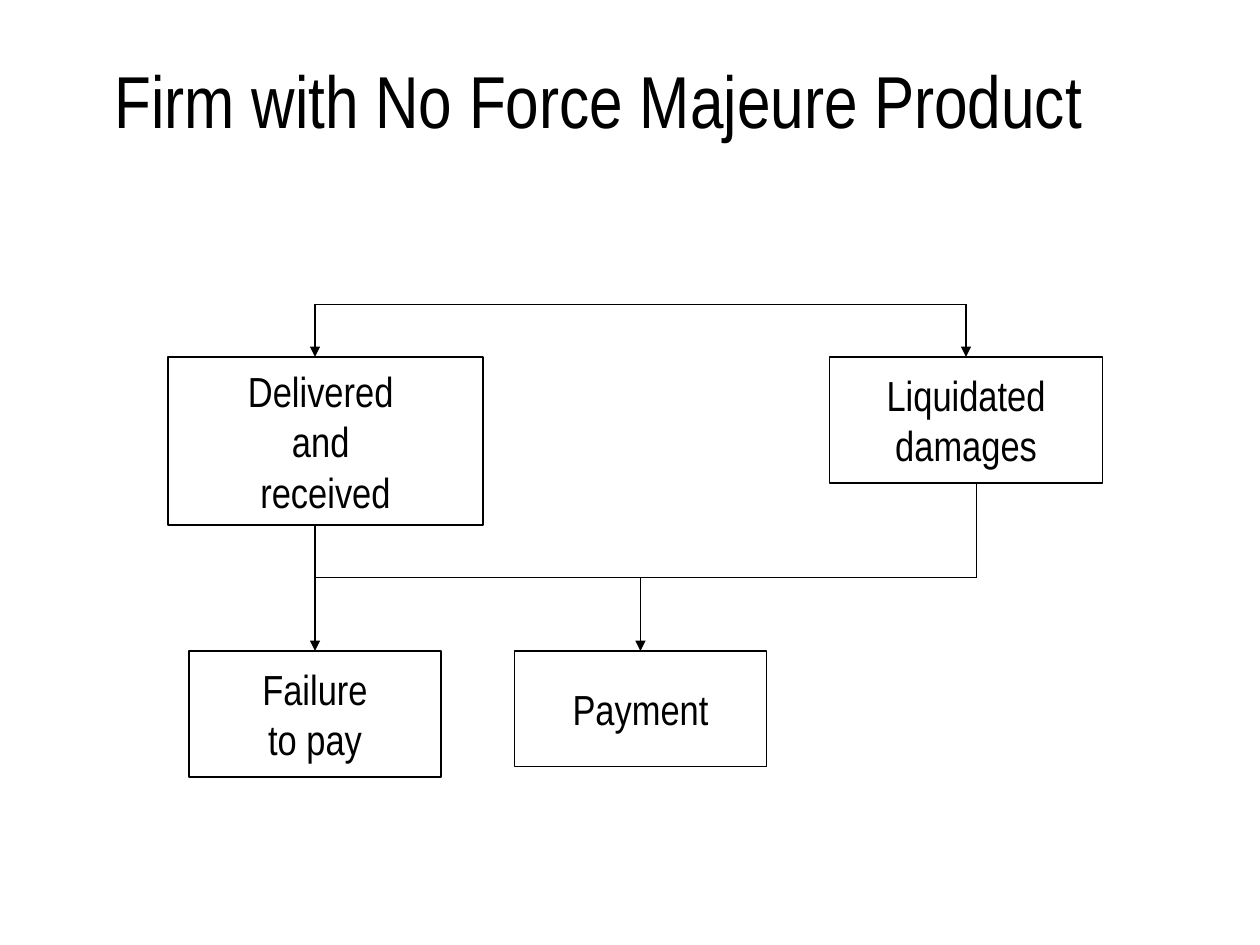
from dataclasses import dataclass
from typing import Optional

from lxml.etree import SubElement
from pptx import Presentation
from pptx.dml.color import RGBColor
from pptx.enum.shapes import MSO_CONNECTOR, MSO_SHAPE
from pptx.enum.text import MSO_ANCHOR, PP_ALIGN
from pptx.oxml.ns import qn
from pptx.shapes.shapetree import SlideShapes
from pptx.util import Pt

BLACK = RGBColor(0x00, 0x00, 0x00)
WHITE = RGBColor(0xFF, 0xFF, 0xFF)
FONT = "Arial Narrow"
LINE_WIDTH = Pt(0.75)

# Heights of the two horizontal branches and x positions of the flow, in points
UPPER_BRANCH, LOWER_BRANCH = 174, 330
LEFT_X, MIDDLE_X, DAMAGES_ENTRY_X, DAMAGES_EXIT_X = 180, 366, 552, 558
OUTCOME_TOP, RESULT_TOP = 204, 372
TIP_LENGTH = 6


@dataclass(frozen=True)
class Box:
    text: str
    left: float
    top: float
    width: float
    height: float
    size: float = 24
    line_spacing: float = 1.0
    fill: Optional[RGBColor] = WHITE
    outline: RGBColor = BLACK


@dataclass(frozen=True)
class Link:
    x1: float
    y1: float
    x2: float
    y2: float
    arrow: bool = False


@dataclass(frozen=True)
class Drop:
    x: float
    top: float
    bottom: float


TITLE = Box("Firm with No Force Majeure Product", 102, 24, 480, 72,
            size=42, line_spacing=0.9, fill=None, outline=WHITE)
DELIVERED = Box("Delivered \nand \nreceived", 96, OUTCOME_TOP, 180, 96)
DAMAGES = Box("Liquidated\ndamages", 474, OUTCOME_TOP, 156, 72)
FAILURE = Box("Failure\nto pay", 108, RESULT_TOP, 144, 72)
PAYMENT = Box("Payment", 294, RESULT_TOP, 144, 66)

LINKS = [
    Link(MIDDLE_X, UPPER_BRANCH, LEFT_X, UPPER_BRANCH),
    Link(MIDDLE_X, UPPER_BRANCH, DAMAGES_ENTRY_X, UPPER_BRANCH),
    Link(DAMAGES_EXIT_X, DAMAGES.top + DAMAGES.height, DAMAGES_EXIT_X, LOWER_BRANCH),
    Link(LEFT_X, LOWER_BRANCH, 384, LOWER_BRANCH),
    Link(DAMAGES_EXIT_X, LOWER_BRANCH, 378, LOWER_BRANCH),
]
DROPS = [
    Drop(LEFT_X, UPPER_BRANCH, OUTCOME_TOP),
    Drop(DAMAGES_ENTRY_X, UPPER_BRANCH, OUTCOME_TOP),
    Drop(LEFT_X, DELIVERED.top + DELIVERED.height, RESULT_TOP),
    Drop(MIDDLE_X, LOWER_BRANCH, RESULT_TOP),
]


def draw_box(shapes: SlideShapes, box: Box) -> None:
    step = shapes.add_shape(
        MSO_SHAPE.RECTANGLE, Pt(box.left), Pt(box.top), Pt(box.width), Pt(box.height)
    )
    step.shadow.inherit = False
    if box.fill is None:
        step.fill.background()
    else:
        step.fill.solid()
        step.fill.fore_color.rgb = box.fill
    step.line.color.rgb = box.outline
    step.line.width = LINE_WIDTH

    frame = step.text_frame
    frame.text = box.text
    frame.word_wrap = False
    frame.vertical_anchor = MSO_ANCHOR.MIDDLE
    for paragraph in frame.paragraphs:
        paragraph.alignment = PP_ALIGN.CENTER
        paragraph.line_spacing = box.line_spacing
        for run in paragraph.runs:
            run.font.name = FONT
            run.font.size = Pt(box.size)
            run.font.color.rgb = BLACK


def draw_link(shapes: SlideShapes, link: Link) -> None:
    connector = shapes.add_connector(
        MSO_CONNECTOR.STRAIGHT, Pt(link.x1), Pt(link.y1), Pt(link.x2), Pt(link.y2)
    )
    connector.line.color.rgb = BLACK
    connector.line.width = LINE_WIDTH
    properties = connector._element.spPr
    if link.arrow:
        SubElement(properties.find(qn("a:ln")), qn("a:tailEnd"), type="triangle")
    SubElement(properties, qn("a:effectLst"))


def draw_drop(shapes: SlideShapes, drop: Drop) -> None:
    """Draw a vertical shaft ending in a short arrow tip."""
    tip_top = drop.bottom - TIP_LENGTH
    draw_link(shapes, Link(drop.x, drop.top, drop.x, tip_top))
    draw_link(shapes, Link(drop.x, tip_top, drop.x, drop.bottom, arrow=True))


def main() -> None:
    deck = Presentation()
    deck.slide_width, deck.slide_height = Pt(720), Pt(540)
    shapes = deck.slides.add_slide(deck.slide_layouts[6]).shapes
    for box in (TITLE, DELIVERED, DAMAGES, FAILURE, PAYMENT):
        draw_box(shapes, box)
    for link in LINKS:
        draw_link(shapes, link)
    for drop in DROPS:
        draw_drop(shapes, drop)
    deck.save("out.pptx")


if __name__ == "__main__":
    main()
